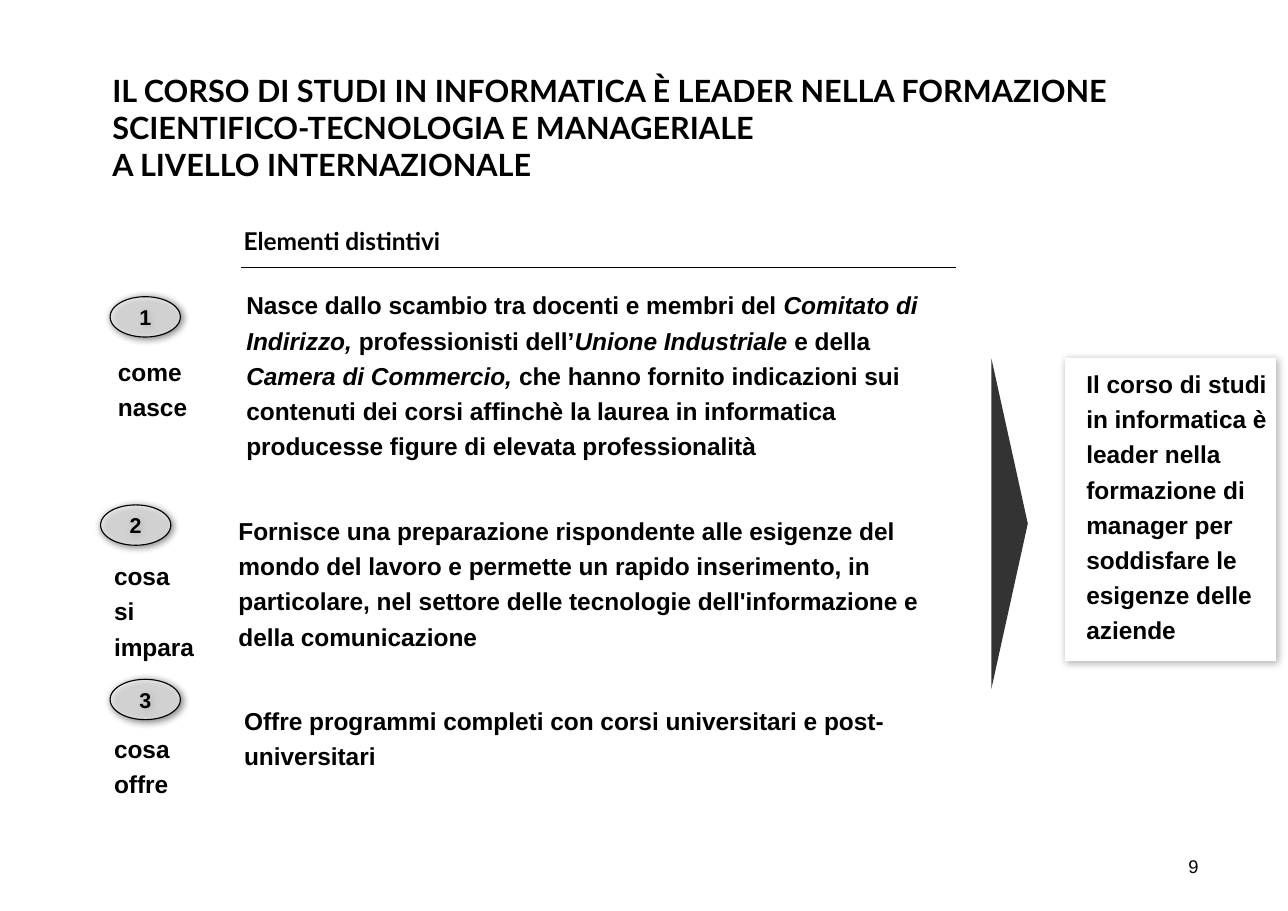
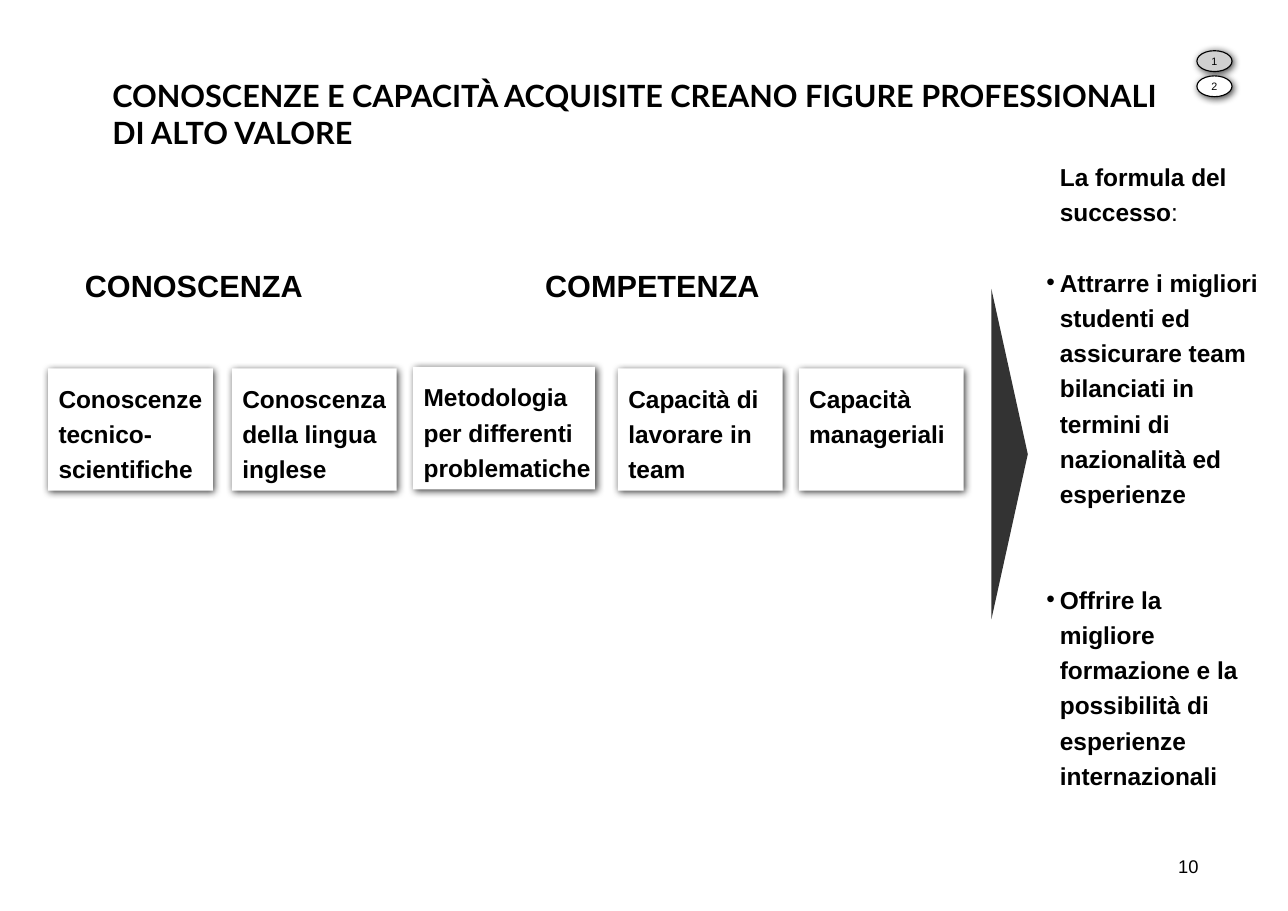
from lxml import etree
from pptx import Presentation
from pptx import util as u
from pptx.dml.color import RGBColor
from pptx.enum import shapes, text
from pptx.oxml import ns

# Shared look
BLACK, WHITE, DARK, GREY = "000000", "FFFFFF", "333333", "D0D0D0"
SOFT_SHADOW = "909090"
BASE = {"name": "Arial", "size": u.Pt(16), "bold": True, "italic": False}
TITLE = {**BASE, "name": "Lato", "size": u.Pt(20)}
HEADING = {**BASE, "name": "Lato"}
STAGE = {**BASE, "size": u.Pt(20)}
BADGE = {**BASE, "size": u.Pt(14)}
SMALL_BADGE = {**BASE, "size": u.Pt(7), "bold": False}
NUMBER = {**BASE, "size": u.Pt(12), "bold": False}
ITALIC = {"italic": True}
LOOSE = {"line_spacing": 1.2, "alignment": text.PP_ALIGN.LEFT}
CENTRED = {"alignment": text.PP_ALIGN.CENTER}
RIGHT = {"alignment": text.PP_ALIGN.RIGHT}


def colour(code):
    return RGBColor.from_string(code)


def assign(target, values):
    for name, value in values.items():
        setattr(target, name, value)


def place(left, top, width, height):
    return [u.Cm(value) for value in (left, top, width, height)]


def child(parent, tag, **attributes):
    return etree.SubElement(parent, ns.qn(tag), attributes)


# Text
def set_frame(frame, insets=(0, 0, 0, 0), wrap=True, anchor=text.MSO_ANCHOR.TOP):
    sides = ("margin_left", "margin_top", "margin_right", "margin_bottom")
    assign(frame, dict(zip(sides, map(u.Cm, insets))))
    assign(frame, {"word_wrap": wrap, "vertical_anchor": anchor,
                   "auto_size": text.MSO_AUTO_SIZE.NONE})


def set_indent(para, left, first=0):
    properties = para._p.get_or_add_pPr()
    properties.set("marL", str(u.Cm(left)))
    properties.set("indent", str(u.Cm(first)))
    return properties


def write(para, spans, font, layout):
    """Spans are a string or (string, format changes) pairs; a newline breaks the line."""
    assign(para, layout)
    if isinstance(spans, str):
        spans = [(spans, {})]
    for words, changes in spans:
        for index, line in enumerate(words.split("\n")):
            if index:
                para.add_line_break()
            span = para.add_run()
            span.text = line
            assign(span.font, {**font, **changes})
            span.font.color.rgb = colour(BLACK)


def add_text(page, area, spans, font=BASE, layout=LOOSE):
    box = page.shapes.add_textbox(*place(*area))
    set_frame(box.text_frame)
    write(box.text_frame.paragraphs[0], spans, font, layout)


# Shapes
def paint(shape, fill):
    shape.fill.solid()
    shape.fill.fore_color.rgb = colour(fill)


def add_shape(page, kind, area, fill, line=None, shadow=None, alpha=None):
    shape = page.shapes.add_shape(kind, *place(*area))
    shape.shadow.inherit = False
    paint(shape, fill)
    if line:
        shape.line.color.rgb = colour(line)
        shape.line.width = u.Pt(0.75)
    else:
        shape.line.fill.background()
    properties = shape._element.spPr
    if alpha:
        solid = properties.find(ns.qn("a:solidFill")).find(ns.qn("a:srgbClr"))
        child(solid, "a:alpha", val=str(alpha * 1000))
    if shadow:
        effects = properties.find(ns.qn("a:effectLst"))
        outer = child(effects, "a:outerShdw", blurRad=str(u.Pt(5)),
                      dist=str(u.Pt(1.4)), dir="2700000", algn="ctr", rotWithShape="0")
        child(child(outer, "a:srgbClr", val=shadow), "a:alpha", val="75000")
    return shape


def add_block(page, area, spans):
    block = add_shape(page, shapes.MSO_SHAPE.RECTANGLE, area, WHITE, alpha=60)
    set_frame(block.text_frame)
    para = block.text_frame.paragraphs[0]
    set_indent(para, 0.51)
    write(para, spans, BASE, LOOSE)


def add_card(page, area, words, insets, shadow=BLACK):
    card = add_shape(page, shapes.MSO_SHAPE.RECTANGLE, area, WHITE, shadow=shadow)
    set_frame(card.text_frame, insets)
    write(card.text_frame.paragraphs[0], words, BASE, LOOSE)


def centre_text(shape, words, font):
    set_frame(shape.text_frame, (0.25, 0.13, 0.25, 0.13), False, text.MSO_ANCHOR.MIDDLE)
    write(shape.text_frame.paragraphs[0], words, font, CENTRED)


def add_badge(page, area, words, font=BADGE, fill=WHITE, alpha=None):
    badge = add_shape(page, shapes.MSO_SHAPE.OVAL, area, fill, BLACK, BLACK, alpha)
    centre_text(badge, words, font)


def add_stage(page, area, words, point):
    stage = add_shape(page, shapes.MSO_SHAPE.PENTAGON, area, WHITE, alpha=60)
    stage.adjustments[0] = point
    centre_text(stage, words, STAGE)


def add_pointer(page, top):
    pointer = add_shape(page, shapes.MSO_SHAPE.ISOSCELES_TRIANGLE,
                        (19.47, top, 7.62, 0.84), DARK)
    pointer.rotation = 90


def add_rule(page, left, right, top):
    rule = page.shapes.add_connector(shapes.MSO_CONNECTOR.STRAIGHT,
                                     u.Cm(left), u.Cm(top), u.Cm(right), u.Cm(top))
    rule.line.color.rgb = colour(BLACK)
    rule.line.width = u.Pt(0.75)
    child(rule._element.spPr, "a:effectLst")


# Placeholders
def move(holder, area):
    assign(holder, dict(zip(("left", "top", "width", "height"), place(*area))))
    set_frame(holder.text_frame)


def fill_list(holder, area, items):
    """Items are (spans, bulleted, space before in points)."""
    move(holder, area)
    paint(holder, WHITE)
    frame = holder.text_frame
    for index, (spans, bulleted, before) in enumerate(items):
        para = frame.add_paragraph() if index else frame.paragraphs[0]
        properties = set_indent(para, 0.31, -0.31 if bulleted else 0)
        if bulleted:
            child(properties, "a:buFont", typeface="Arial")
            child(properties, "a:buChar", char="•")
        else:
            child(properties, "a:buNone")
        write(para, spans, BASE, {**LOOSE, "space_before": u.Pt(before)})


def add_page(deck, layout, title, top, height, number):
    page = deck.slides.add_slide(deck.slide_layouts[layout])
    move(page.shapes.title, (2.59, top, 24.18, height))
    write(page.shapes.title.text_frame.paragraphs[0], title, TITLE,
          {"alignment": text.PP_ALIGN.LEFT})
    add_text(page, (21.82, 19.71, 5.82, 0.51), number, NUMBER, RIGHT)
    return page


# Slides
def build_distinctive(deck):
    page = add_page(deck, 5, "IL CORSO DI STUDI IN INFORMATICA È LEADER NELLA FORMAZIONE "
                    "SCIENTIFICO-TECNOLOGIA E MANAGERIALE \nA LIVELLO INTERNAZIONALE",
                    1.66, 2.54, "9")
    add_text(page, (5.62, 5.08, 13.44, 0.81), "Elementi distintivi", HEADING)
    add_rule(page, 5.56, 22.05, 6.17)

    origin = [
        ("Nasce dallo scambio tra docenti e membri del ", {}),
        ("Comitato di Indirizzo, ", ITALIC),
        ("professionisti dell’", {}),
        ("Unione Industriale", ITALIC),
        (" e della ", {}),
        ("Camera di Commercio,", ITALIC),
        (" che hanno fornito indicazioni sui contenuti dei corsi affinchè la laurea "
         "in informatica producesse figure di elevata professionalità", {}),
    ]
    learning = ("Fornisce una preparazione rispondente alle esigenze del mondo del lavoro "
                "e permette un rapido inserimento, in particolare, nel settore delle "
                "tecnologie dell'informazione e della comunicazione")
    offer = "Offre programmi completi con corsi universitari e post-universitari"
    # badge corner; label corner, line count and text; description corner, line count and text
    rows = [
        ((2.54, 6.84), (2.21, 8.1), 2, "come\nnasce", (5.17, 6.56), 5, origin),
        ((2.32, 11.64), (2.12, 12.8), 3, "cosa\nsi impara", (4.99, 11.76), 4, learning),
        ((2.54, 15.66), (2.12, 16.79), 2, "cosa\noffre", (5.12, 16.14), 2, offer),
    ]
    line = 0.81
    for number, row in enumerate(rows, 1):
        badge, label_at, label_lines, label, detail_at, detail_lines, detail = row
        add_block(page, (*detail_at, 17.07, line * detail_lines), detail)
        add_badge(page, (*badge, 1.62, 0.93), str(number), alpha=60)
        add_block(page, (*label_at, 2.46, line * label_lines), label)

    add_pointer(page, 11.65)
    add_card(page, (24.56, 8.25, 4.87, 6.99),
             "Il corso di studi in informatica è leader nella formazione di manager "
             "per soddisfare le esigenze delle aziende", (0.49, 0.12, 0, 0), SOFT_SHADOW)


def build_skills(deck):
    page = add_page(deck, 1, "CONOSCENZE E CAPACITÀ ACQUISITE CREANO FIGURE PROFESSIONALI "
                    "DI ALTO VALORE", 1.78, 1.7, "10")
    for index, fill in enumerate((GREY, WHITE)):
        add_badge(page, (27.6, 1.17 + 0.58 * index, 0.81, 0.48), str(index + 1),
                  SMALL_BADGE, fill)
    add_stage(page, (1.07, 5.92, 7.19, 1.3), "CONOSCENZA", 0.6)
    add_stage(page, (8.9, 5.92, 13, 1.3), "COMPETENZA", 1.09)

    skills = [
        (1.11, 8.49, 3.8, "Conoscenze tecnico-scientifiche"),
        (5.35, 8.49, 3.8, "Conoscenza della lingua inglese"),
        (9.53, 8.46, 4.19, "Metodologia per differenti problematiche"),
        (14.25, 8.49, 3.8, "Capacità di lavorare in team"),
        (18.42, 8.49, 3.8, "Capacità manageriali"),
    ]
    for left, top, width, words in skills:
        add_card(page, (left, top, width, 2.82), words, (0.24, 0.22, 0, 0))

    add_pointer(page, 10.05)
    fill_list(page.placeholders[1], (24.13, 3.6, 5.08, 15.49), [
        ([("La formula del successo", {}), (":", {"bold": False})], False, 0),
        ("Attrarre i migliori studenti ed assicurare team bilanciati in termini di "
         "nazionalità ed esperienze", True, 23),
        ("Offrire la\nmigliore formazione e la possibilità di esperienze internazionali",
         True, 46),
    ])


def main():
    deck = Presentation()
    deck.slide_width, deck.slide_height = u.Cm(29.7), u.Cm(21)
    build_distinctive(deck)
    build_skills(deck)
    deck.save("out.pptx")


if __name__ == "__main__":
    main()
